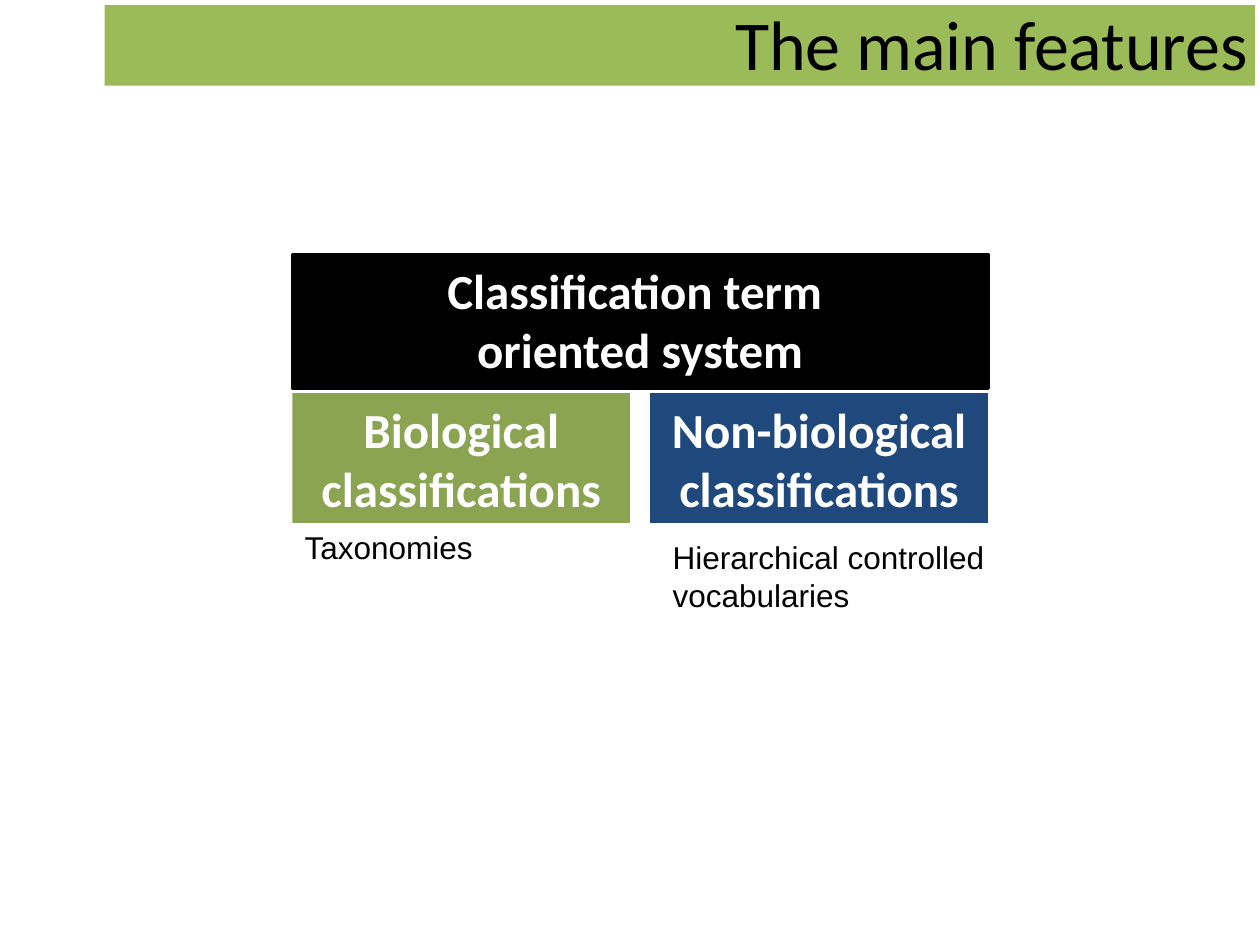
"""Build the slide that shows the main features of a classification system."""
from dataclasses import dataclass

from pptx import Presentation
from pptx import util as u
from pptx.dml.color import RGBColor
from pptx.enum import shapes, text


@dataclass(frozen=True)
class Theme:
    band: str = "9BBB59"
    black: str = "000000"
    white: str = "FFFFFF"
    green: str = "8BA452"
    navy: str = "1F497D"
    heading: str = "Calibri"
    body: str = "Arial"
    title_size: int = 40
    block_size: int = 28
    note_size: int = 18


class SlideBuilder:
    def __init__(self, s, theme):
        self.s = s
        self.theme = theme

    def add_lines(self, tf, lines, font, size, color, align, bold=False):
        for i, line in enumerate(lines):
            p = tf.paragraphs[0] if i == 0 else tf.add_paragraph()
            p.alignment = align
            r = p.add_run()
            r.text = line
            r.font.name = font
            r.font.size = u.Pt(size)
            r.font.bold = bold
            r.font.color.rgb = RGBColor.from_string(color)

    def rect(self, box, fill, outline=None):
        sp = self.s.shapes.add_shape(shapes.MSO_SHAPE.RECTANGLE, *map(u.Inches, box))
        sp.shadow.inherit = False
        sp.fill.solid()
        sp.fill.fore_color.rgb = RGBColor.from_string(fill)
        if outline:
            sp.line.color.rgb = RGBColor.from_string(outline)
            sp.line.width = u.Pt(2)
        else:
            sp.line.fill.background()
        return sp

    def block(self, box, lines, fill, outline=None):
        t = self.theme
        tf = self.rect(box, fill, outline).text_frame
        tf.word_wrap = True
        tf.vertical_anchor = text.MSO_ANCHOR.TOP
        self.add_lines(tf, lines, t.heading, t.block_size, t.white, text.PP_ALIGN.CENTER, True)

    def note(self, box, lines):
        t = self.theme
        tf = self.s.shapes.add_textbox(*map(u.Inches, box)).text_frame
        tf.word_wrap = False
        self.add_lines(tf, lines, t.body, t.note_size, t.black, text.PP_ALIGN.LEFT)

    def title(self, box, line):
        t = self.theme
        tf = self.s.shapes.add_textbox(*map(u.Inches, box)).text_frame
        tf.word_wrap = True
        tf.vertical_anchor = text.MSO_ANCHOR.MIDDLE
        self.add_lines(tf, [line], t.heading, t.title_size, t.black, text.PP_ALIGN.RIGHT)


def main():
    prs = Presentation()
    prs.slide_width, prs.slide_height = u.Inches(10), u.Inches(7.5)
    theme = Theme()
    slide = SlideBuilder(prs.slides.add_slide(prs.slide_layouts[6]), theme)

    left, width, gap = 2.32, 2.68, 0.16
    slide.rect((0.83, 0.04, 9.13, 0.64), theme.band)
    slide.block((left, 2.02, 2 * width + gap, 1.06),
                ["Classification term ", "oriented system"], theme.black, theme.black)
    branches = [("Biological", theme.green), ("Non-biological", theme.navy)]
    for i, (name, fill) in enumerate(branches):
        slide.block((left + i * (width + gap), 3.12, width, 1.03),
                    [name, "classifications"], fill)
    slide.note((left, 4.14, 1.56, 0.4), ["Taxonomies"])
    slide.note((5.24, 4.22, 2.74, 0.7), ["Hierarchical controlled", "vocabularies"])
    slide.title((0.5, 0, 9.5, 0.68), "The main features")

    prs.save("out.pptx")


if __name__ == "__main__":
    main()
